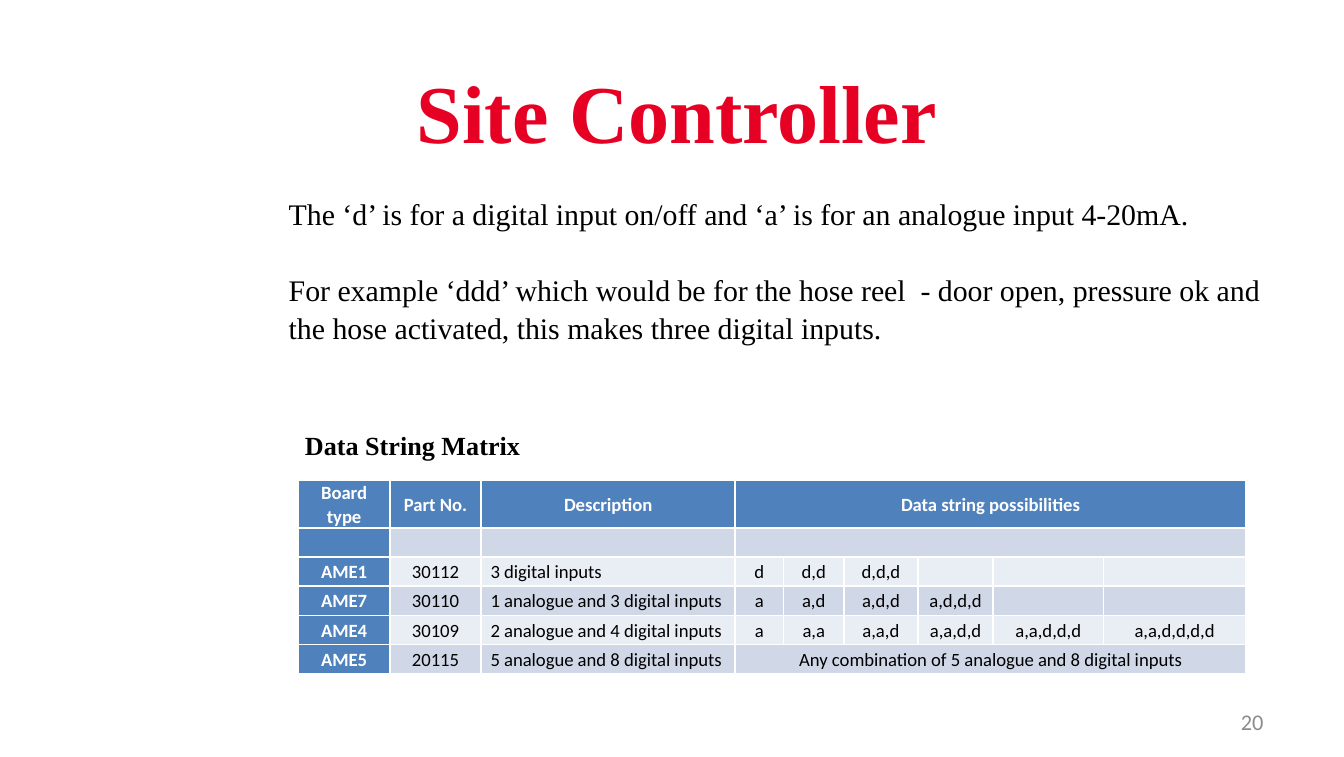
from lxml.etree import SubElement
from pptx import Presentation
from pptx.dml.color import RGBColor
from pptx.enum.text import MSO_ANCHOR, PP_ALIGN
from pptx.oxml.ns import qn
from pptx.util import Inches, Pt

RED = RGBColor(0xE6, 0x00, 0x23)
BLACK = RGBColor(0x00, 0x00, 0x00)
WHITE = RGBColor(0xFF, 0xFF, 0xFF)
GREY = RGBColor(0x8C, 0x8C, 0x8C)
BLUE = RGBColor(0x4F, 0x81, 0xBD)
BAND_DARK = RGBColor(0xD0, 0xD8, 0xE8)
BAND_LIGHT = RGBColor(0xE9, 0xED, 0xF4)

SERIF, SANS = "Times New Roman", "Calibri"
LINE_SPACING = 1.07
COLUMN_WIDTHS = [6.8, 6.8, 18.9, 3.6, 4.5, 5.5, 5.6, 8.2, 10.6]
DESCRIPTION, FIRST_STRING = 2, 3
BOARDS = [
    ["Board type", "Part No.", "Description", "Data string possibilities"],
    [],
    ["AME1", "30112", "3 digital inputs", "d", "d,d", "d,d,d"],
    ["AME7", "30110", "1 analogue and 3 digital inputs", "a", "a,d", "a,d,d", "a,d,d,d"],
    ["AME4", "30109", "2 analogue and 4 digital inputs",
     "a", "a,a", "a,a,d", "a,a,d,d", "a,a,d,d,d", "a,a,d,d,d,d"],
    ["AME5", "20115", "5 analogue and 8 digital inputs",
     "Any combination of 5 analogue and 8 digital inputs"],
]
MERGED_ROWS = (0, 1, 5)


def grid(steps):
    """Length of a number of grid steps; the slide is 100 steps wide."""
    return Inches(steps / 10)


class SlideBuilder:
    def __init__(self, slide):
        self.slide = slide

    def style(self, paragraph, font, size, color, bold=False, align=PP_ALIGN.LEFT):
        paragraph.alignment = align
        for run in paragraph.runs:
            run.font.name = font
            run.font.size = Pt(size)
            run.font.color.rgb = color
            run.font.bold = bold

    def text(self, box, paragraphs, font, size, color, bold=False, align=PP_ALIGN.LEFT,
             anchor=MSO_ANCHOR.MIDDLE, wrap=True, line_spacing=None, gap=0):
        frame = self.slide.shapes.add_textbox(*map(grid, box)).text_frame
        frame.word_wrap = wrap
        frame.vertical_anchor = anchor
        frame.text = "\n".join(paragraphs)
        for index, paragraph in enumerate(frame.paragraphs):
            self.style(paragraph, font, size, color, bold, align)
            if line_spacing:
                paragraph.line_spacing = line_spacing
            if index:
                paragraph.space_before = Pt(gap)

    def cell(self, cell, words, fill, color, bold, align):
        cell.fill.solid()
        cell.fill.fore_color.rgb = fill
        cell.vertical_anchor = MSO_ANCHOR.MIDDLE
        cell.margin_left = cell.margin_right = Inches(0.07)
        cell.margin_top = cell.margin_bottom = 0
        cell.text_frame.text = words
        paragraph = cell.text_frame.paragraphs[0]
        paragraph.line_spacing = LINE_SPACING
        self.style(paragraph, SANS, 10, color, bold, align)
        if not words:  # keeps empty cells from stretching their row
            SubElement(paragraph._p, qn("a:endParaRPr"), sz="1000")

    def table(self, box, rows, widths, merged_rows):
        table = self.slide.shapes.add_table(len(rows), len(widths), *map(grid, box)).table
        table.first_col = True
        for column, width in zip(table.columns, widths):
            column.width = grid(width)
        for r, words in enumerate(rows):
            band = BAND_DARK if r % 2 else BAND_LIGHT
            for c in range(len(widths)):
                heading = r == 0 or c == 0
                left = c == DESCRIPTION and not heading
                self.cell(table.cell(r, c), words[c] if c < len(words) else "",
                          BLUE if heading else band, WHITE if heading else BLACK,
                          heading, PP_ALIGN.LEFT if left else PP_ALIGN.CENTER)
            if r in merged_rows:
                table.cell(r, FIRST_STRING).merge(table.cell(r, len(widths) - 1))


def main():
    deck = Presentation()
    deck.slide_width, deck.slide_height = Inches(10), Inches(5.63)
    page = SlideBuilder(deck.slides.add_slide(deck.slide_layouts[6]))

    page.text((71.7, 52.2, 23.3, 3), ["20"], SANS, 12, GREY, align=PP_ALIGN.RIGHT)
    page.text((30, 7.1, 66.7, 5.3), ["Site Controller"], SERIF, 44, RED, bold=True,
              anchor=MSO_ANCHOR.BOTTOM)
    page.text((20.5, 13.9, 77.2, 12.5), [
        "The ‘d’ is for a digital input on/off and ‘a’ is for an analogue input 4-20mA.",
        "For example ‘ddd’ which would be for the hose reel  - door open, pressure ok and "
        "the hose activated, this makes three digital inputs.",
    ], SERIF, 16, BLACK, anchor=MSO_ANCHOR.TOP, line_spacing=LINE_SPACING, gap=20)
    page.table((22.2, 35.7, 70.5, 13), BOARDS, COLUMN_WIDTHS, MERGED_ROWS)
    page.text((21.7, 31.4, 18.1, 3.4), ["Data String Matrix"], SERIF, 14, BLACK, bold=True,
              wrap=False)
    deck.save("out.pptx")


if __name__ == "__main__":
    main()
